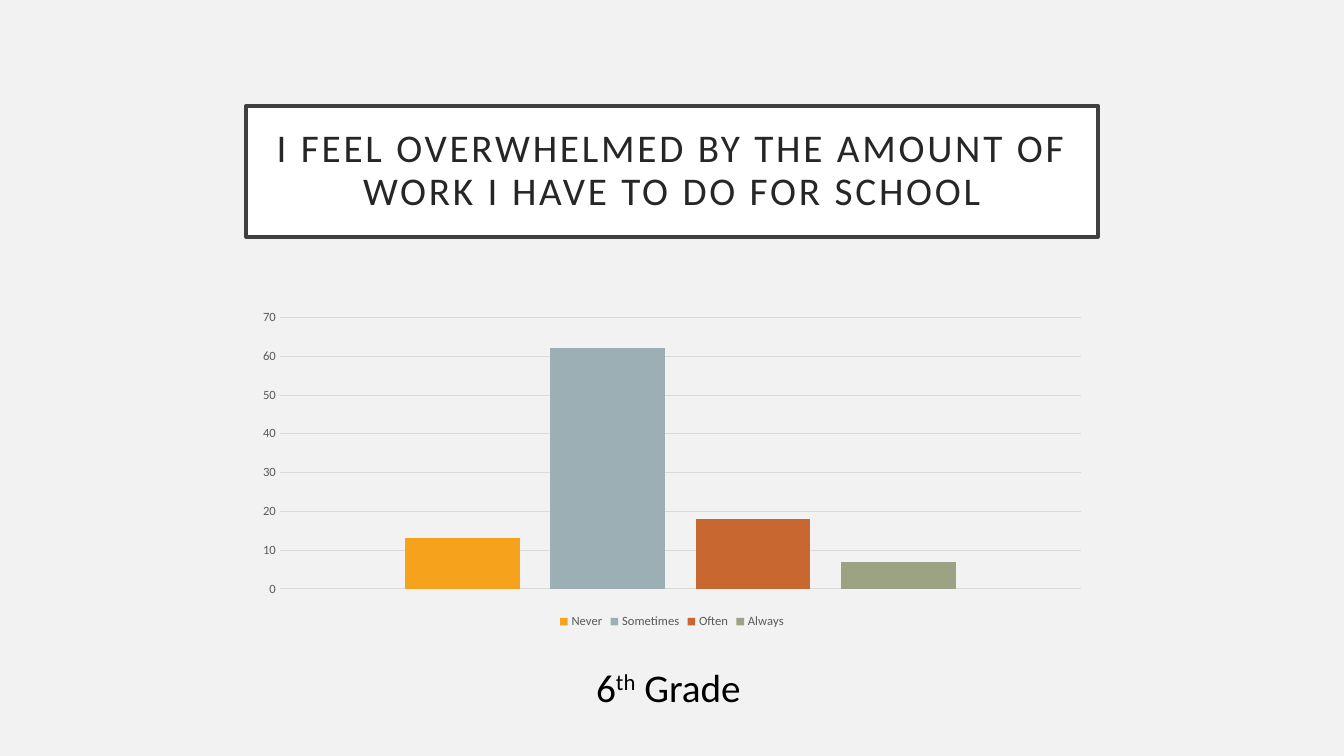
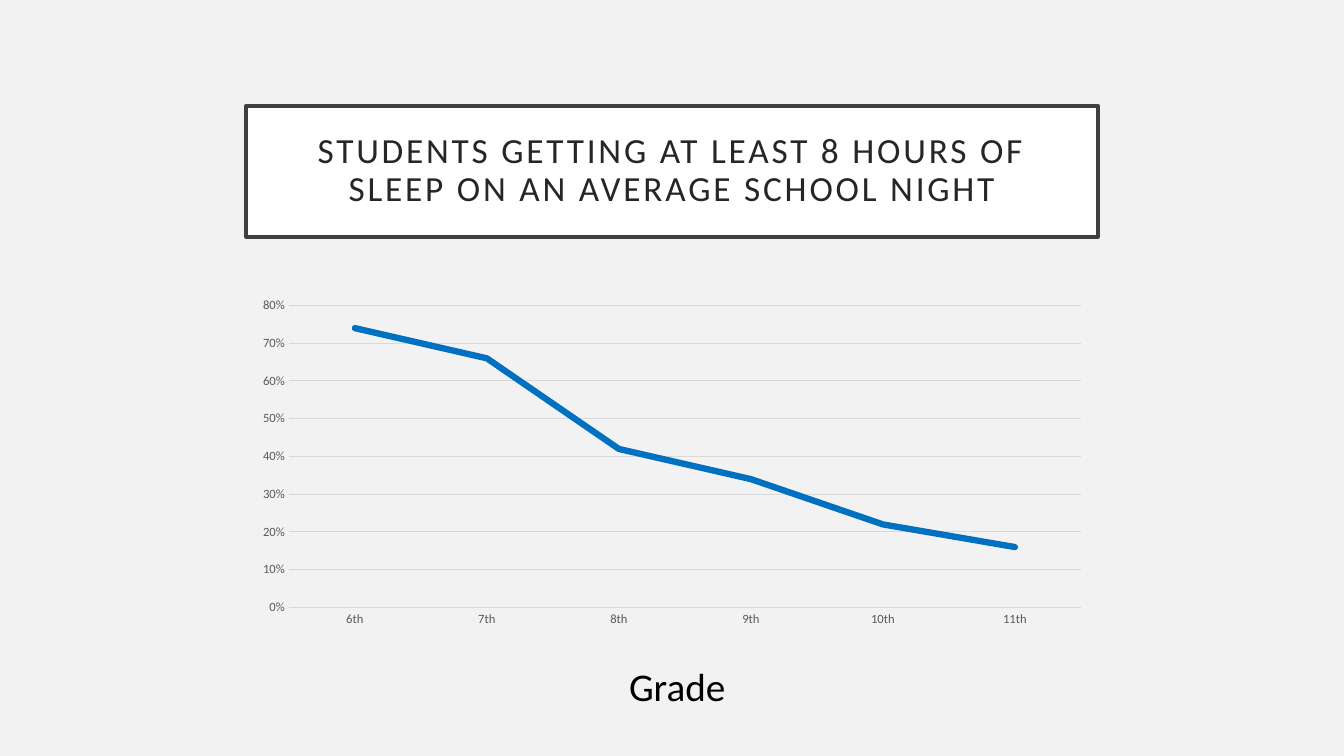
from dataclasses import dataclass

from pptx import Presentation
from pptx.chart.data import CategoryChartData as ChartData
from pptx.dml.color import RGBColor as RGB
from pptx.enum.chart import XL_CHART_TYPE as CT, XL_LEGEND_POSITION as LEGEND
from pptx.enum.chart import XL_MARKER_STYLE as MARKER, XL_TICK_MARK as TICK
from pptx.enum.text import MSO_ANCHOR, MSO_AUTO_SIZE as AUTO, PP_ALIGN as AL
from pptx.util import Inches, Pt


@dataclass(frozen=True)
class Theme:
    font: str = "Calibri"
    # colours
    back: str = "F2F2F2"
    panel: str = "FFFFFF"
    border: str = "404040"
    title: str = "262626"
    text: str = "000000"
    axis: str = "595959"
    grid: str = "D9D9D9"
    line: str = "0070C0"
    bars: tuple = ("F6A21D", "9BAFB5", "C96731", "9CA383")
    # type sizes
    title_size: float = 28
    caption_size: float = 28
    chart_size: float = 10
    axis_size: float = 9
    # shared column of title and chart
    left: float = 2.44
    width: float = 8.45


class Deck:
    def __init__(self, theme):
        self.t = theme
        self.prs = Presentation()
        self.prs.slide_width, self.prs.slide_height = Inches(13.33), Inches(7.5)
        self.fill(self.prs.slide_master.background, theme.back)
        self.s = None

    def fill(self, item, color):
        item.fill.solid()
        item.fill.fore_color.rgb = RGB.from_string(color)

    def stroke(self, line, color, width):
        line.color.rgb = RGB.from_string(color)
        line.width = Pt(width)

    def style(self, font, size, color):
        font.name, font.size = self.t.font, Pt(size)
        font.color.rgb = RGB.from_string(color)

    def run(self, p, text, size, color, **attrs):
        r = p.add_run()
        r.text = text
        self.style(r.font, size, color)
        for name, value in attrs.items():
            r._r.get_or_add_rPr().set(name, str(value))

    # Slide with its framed title
    def slide(self, title, size=None):
        t = self.t
        self.s = self.prs.slides.add_slide(self.prs.slide_layouts[5])
        sp = self.s.shapes.title
        sp.left, sp.top = Inches(t.left), Inches(1.05)
        sp.width, sp.height = Inches(t.width), Inches(1.3)
        self.fill(sp, t.panel)
        self.stroke(sp.line, t.border, 2.5)
        tf = sp.text_frame
        tf.word_wrap, tf.auto_size = True, AUTO.NONE
        tf.vertical_anchor = MSO_ANCHOR.MIDDLE
        tf.margin_left = tf.margin_right = Inches(0.2)
        tf.margin_top = tf.margin_bottom = Inches(0.2)
        p = tf.paragraphs[0]
        p.alignment, p.line_spacing = AL.CENTER, 0.9
        self.run(p, title, size or t.title_size, t.title, spc=200)

    # Caption under the chart; each part is text plus its baseline shift
    def caption(self, parts, left, top, width, align=AL.LEFT):
        sp = self.s.shapes.add_textbox(Inches(left), Inches(top),
                                       Inches(width), Inches(0.57))
        tf = sp.text_frame
        tf.word_wrap, tf.auto_size = True, AUTO.SHAPE_TO_FIT_TEXT
        p = tf.paragraphs[0]
        p.alignment = align
        for text, baseline in parts:
            self.run(p, text, self.t.caption_size, self.t.text, baseline=baseline)

    # Chart with the shared axis style
    def chart(self, kind, cats, series, fmt="General"):
        t = self.t
        data = ChartData(number_format=fmt)
        data.categories = cats
        for name, values in series:
            data.add_series(name, values)
        chart = self.s.shapes.add_chart(kind, Inches(t.left), Inches(2.89),
                                        Inches(t.width), Inches(3.39), data).chart
        chart.has_title = chart.has_legend = False
        self.style(chart.font, t.chart_size, t.text)
        for axis in (chart.category_axis, chart.value_axis):
            axis.major_tick_mark = axis.minor_tick_mark = TICK.NONE
            self.style(axis.tick_labels.font, t.axis_size, t.axis)
        self.stroke(chart.category_axis.format.line, t.grid, 0.75)
        val = chart.value_axis
        val.format.line.fill.background()
        val.has_major_gridlines = True
        self.stroke(val.major_gridlines.format.line, t.grid, 0.75)
        val.tick_labels.number_format = fmt
        val.tick_labels.number_format_is_linked = False
        chart.plots[0].vary_by_categories = False
        return chart

    def bar_chart(self, cats, series, top):
        chart = self.chart(CT.COLUMN_CLUSTERED, cats, series)
        chart.category_axis.visible = False
        val = chart.value_axis
        val.minimum_scale, val.maximum_scale, val.major_unit = 0, top, 10
        plot = chart.plots[0]
        plot.gap_width, plot.overlap = 219, -27
        for ser, color in zip(plot.series, self.t.bars):
            self.fill(ser.format, color)
        chart.has_legend = True
        chart.legend.position = LEGEND.BOTTOM
        chart.legend.include_in_layout = False
        self.style(chart.legend.font, self.t.axis_size, self.t.axis)

    def line_chart(self, cats, series):
        chart = self.chart(CT.LINE, cats, series, "0%")
        for ser in chart.plots[0].series:
            ser.smooth = False
            ser.marker.style = MARKER.NONE
            self.stroke(ser.format.line, self.t.line, 4.5)
            ser._element.xpath("c:spPr/a:ln")[0].set("cap", "rnd")


def main():
    deck = Deck(Theme())

    # Workload in 6th grade
    deck.slide("I FEEL OVERWHELMED BY THE AMOUNT OF WORK I HAVE TO DO FOR SCHOOL")
    deck.bar_chart(["1"], [("Never", [13]), ("Sometimes", [62]),
                           ("Often", [18]), ("Always", [7])], top=75)
    deck.caption([("6", 0), ("th", 30000), (" Grade", 0)], 5.28, 6.53, 2.7, AL.CENTER)

    # Sleep by grade
    deck.slide("STUDENTS GETTING AT LEAST 8 HOURS OF SLEEP ON AN AVERAGE SCHOOL NIGHT",
               size=25.2)
    deck.line_chart([f"{grade}th" for grade in range(6, 12)],
                    [("Series 1", [0.74, 0.66, 0.42, 0.34, 0.22, 0.16])])
    deck.caption([("Grade", 0)], 6.14, 6.52, 3.28)

    deck.prs.save("out.pptx")


if __name__ == "__main__":
    main()
